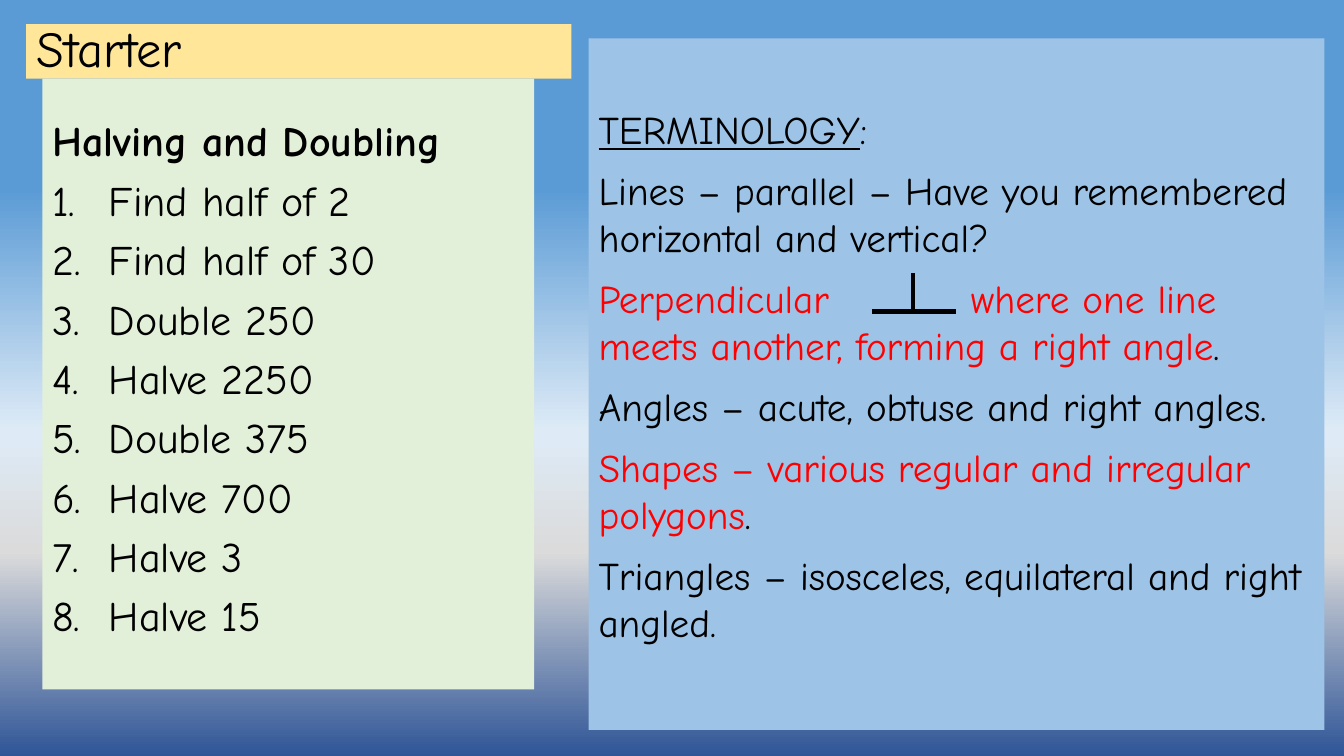
from copy import deepcopy
from dataclasses import dataclass
from lxml.etree import SubElement
from pptx import Presentation
from pptx.dml.color import RGBColor
from pptx.enum.shapes import MSO_CONNECTOR
from pptx.enum.text import MSO_ANCHOR, MSO_AUTO_SIZE, PP_ALIGN
from pptx.oxml.ns import qn
from pptx.util import Pt


@dataclass
class Theme:
    font: str = "Comic Neue"
    ink: str = "000000"
    red: str = "FF0000"
    gold: str = "FFE699"
    green: str = "E2F0D9"
    blue: str = "9DC3E6"
    sky: tuple = ((25, "5B9BD5"), (57, "DEEBF7"), (73, "DBDBDB"), (100, "2F5597"))
    head: int = 36
    task: int = 30
    term: int = 28


theme = Theme()


def panel(shape, box, color, top):
    shape.left, shape.top, shape.width, shape.height = map(Pt, box)
    shape.fill.solid()
    shape.fill.fore_color.rgb = RGBColor.from_string(color)
    frame = shape.text_frame
    frame.word_wrap = True
    frame.auto_size = MSO_AUTO_SIZE.NONE
    frame.margin_top = Pt(top)
    return frame


def style(para, size, gap=0, lead=None):
    para.alignment = PP_ALIGN.LEFT
    para.space_before = Pt(gap)
    para.line_spacing = lead
    para.font.name = theme.font
    para.font.size = Pt(size)
    para.font.color.rgb = RGBColor.from_string(theme.ink)


deck = Presentation()
deck.slide_width, deck.slide_height = Pt(960), Pt(540)
slide = deck.slides.add_slide(deck.slide_layouts[5])

fill = slide.background.fill
fill.gradient()
fill.gradient_angle = 270
stops = slide.element.xpath(".//a:gsLst")[0]
for _ in theme.sky[2:]:
    stops.append(deepcopy(stops[0]))
for stop, (place, color) in zip(fill.gradient_stops, theme.sky):
    stop.position = place / 100
    stop.color.rgb = RGBColor.from_string(color)

frame = panel(slide.shapes.title, (18.7, 17.3, 389.5, 38.9), theme.gold, 3.6)
frame.vertical_anchor = MSO_ANCHOR.MIDDLE
frame.text = "Starter"
style(frame.paragraphs[0], theme.head, lead=0.9)

tasks = [
    "Find half of 2",
    "Find half of 30",
    "Double 250",
    "Halve 2250",
    "Double 375",
    "Halve 700",
    "Halve 3",
    "Halve 15",
]
box = (30.2, 56.2, 351.4, 436.3)
frame = panel(slide.shapes.add_textbox(0, 0, 0, 0), box, theme.green, 30)
para = frame.paragraphs[0]
para.text = "Halving and Doubling"
style(para, theme.task, lead=0.9)
para.font.bold = True
for task in tasks:
    para = frame.add_paragraph()
    para.text = task
    props = para._p.get_or_add_pPr()
    props.set("marL", str(Pt(40.5)))
    props.set("indent", str(Pt(-40.5)))
    SubElement(props, qn("a:buFont"), typeface=theme.font)
    SubElement(props, qn("a:buAutoNum"), type="arabicPeriod")
    style(para, theme.task, 10, 0.9)

terms = [
    [("TERMINOLOGY", "line"), (":", "")],
    [("Lines – parallel – Have you remembered horizontal and vertical?", "")],
    [
        ("Perpendicular\twhere one line meets another, forming a right angle", "red"),
        (".", ""),
    ],
    [("Angles – acute, obtuse and right angles.", "")],
    [("Shapes – various regular and irregular polygons", "red"), (".", "")],
    [("Triangles – isosceles, equilateral and right angled.", "")],
]
box = (420.5, 27.4, 525.6, 493.9)
frame = panel(slide.shapes.add_textbox(0, 0, 0, 0), box, theme.blue, 47.5)
for row, term in enumerate(terms):
    para = frame.add_paragraph() if row else frame.paragraphs[0]
    if "\t" in term[0][0]:
        tabs = SubElement(para._p.get_or_add_pPr(), qn("a:tabLst"))
        SubElement(tabs, qn("a:tab"), pos=str(Pt(266)), algn="l")
    style(para, theme.term, 10 if row else 0)
    for text, look in term:
        run = para.add_run()
        run.text = text
        if look == "line":
            run.font.underline = True
        if look == "red":
            run.font.color.rgb = RGBColor.from_string(theme.red)

for ends in ((622.8, 222.5, 682.6, 222.5), (652.3, 222.5, 652.3, 195.1)):
    line = slide.shapes.add_connector(MSO_CONNECTOR.STRAIGHT, *map(Pt, ends))
    line.line.width = Pt(3)
    line.line.color.rgb = RGBColor.from_string(theme.ink)
    SubElement(line._element.spPr, qn("a:effectLst"))

deck.save("out.pptx")
